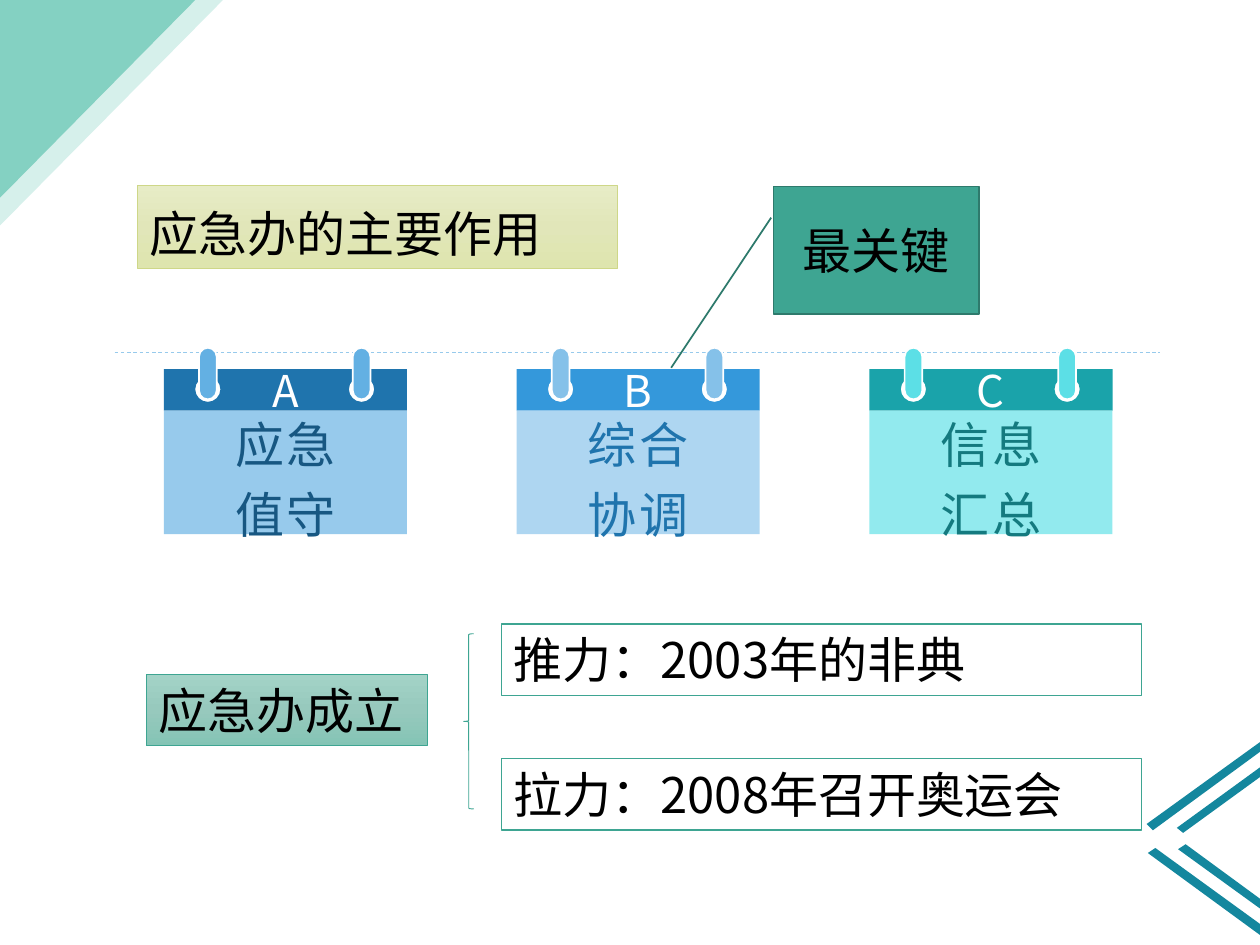
from lxml import etree
from pptx import Presentation
from pptx.dml.color import RGBColor
from pptx.enum.dml import MSO_LINE
from pptx.enum.shapes import MSO_CONNECTOR, MSO_SHAPE
from pptx.enum.text import MSO_ANCHOR, MSO_AUTO_SIZE, PP_ALIGN
from pptx.oxml.ns import qn
from pptx.util import Inches, Pt

RECTANGLE = MSO_SHAPE.RECTANGLE
TOP, MIDDLE = MSO_ANCHOR.TOP, MSO_ANCHOR.MIDDLE
LEFT, CENTER = PP_ALIGN.LEFT, PP_ALIGN.CENTER
GROW, FIXED = MSO_AUTO_SIZE.SHAPE_TO_FIT_TEXT, MSO_AUTO_SIZE.NONE
FONT = "Noto Sans CJK SC"

COLORS = {
    "white": "FFFFFF", "black": "000000",
    "corner_pale": "D6F0EB", "corner": "84D1C2", "stripe": "14879E",
    "rail": "97CAEC", "green": "3EA592", "green_dark": "2E7A6C",
    "title_line": "CED788",
}
TITLE_GRADIENT = ("E7ECC6", "E1E6B9", "DEE5AE")
CAUSE_GRADIENT = ("A3D3C7", "97C9BD", "84C4B5")
CARDS = [
    ("A", "应急\n值守", {"header": "1F74AD", "body": "97CAEC", "text": "175782", "ring": "63B0E3"}),
    ("B", "综合\n协调", {"header": "3498DB", "body": "AED6F1", "text": "1F74AD", "ring": "85C1E9"}),
    ("C", "信息\n汇总", {"header": "1AA3AA", "body": "92EAEE", "text": "147A7F", "ring": "5CDFE6"}),
]
REASONS = ["推力：2003年的非典", "拉力：2008年召开奥运会"]
STRIPES = [
    [(9.1, 6.54), (9.15, 6.59), (10.01, 5.96), (10, 5.89)],
    [(9.11, 6.77), (10, 7.42), (10.01, 7.34), (9.17, 6.73)],
    [(10, 6.09), (9.34, 6.57), (9.39, 6.61), (10.01, 6.16)],
    [(9.41, 6.7), (9.35, 6.74), (10, 7.21), (10.01, 7.14)],
]


def paint(shape, fill=None, line=None, width=0.5):
    """Set a shape's solid fill and outline and drop its shadow."""
    shape.shadow.inherit = False
    if fill:
        shape.fill.solid()
        shape.fill.fore_color.rgb = RGBColor.from_string(fill)
    else:
        shape.fill.background()
    if line:
        shape.line.color.rgb = RGBColor.from_string(line)
        shape.line.width = Pt(width)
    else:
        shape.line.fill.background()


def paint_gradient(shape, colors):
    """Fill a shape from top to bottom with evenly spaced colours."""
    shape.fill.gradient()
    shape.fill.gradient_angle = 270
    stops = shape._element.spPr.find(".//" + qn("a:gsLst"))
    for stop in list(stops):
        stops.remove(stop)
    for index, color in enumerate(colors):
        position = index * 100000 // (len(colors) - 1)
        stop = etree.SubElement(stops, qn("a:gs"), pos=str(position))
        etree.SubElement(stop, qn("a:srgbClr"), val=color)


def add_box(slide, kind, box, fill=None, line=None, width=0.5):
    """Add a painted preset shape at a box given in inches."""
    shape = slide.shapes.add_shape(kind, *map(Inches, box))
    paint(shape, fill, line, width)
    return shape


def add_outline(slide, points, fill):
    """Add a filled freeform with corners given in inches."""
    corners = [(Inches(x), Inches(y)) for x, y in points]
    builder = slide.shapes.build_freeform(*corners[0], scale=1.0)
    builder.add_line_segments(corners[1:], close=True)
    shape = builder.convert_to_shape()
    paint(shape, fill)
    return shape


def punch_hole(shape, center_x, center_y, radius):
    """Cut a round hole, placed relative to the shape, out of a freeform."""
    outline = shape._element.spPr.find(".//" + qn("a:path"))
    handle = 0.55
    curves = [
        ("moveTo", [(0, -1)]),
        ("cubicBezTo", [(-handle, -1), (-1, -handle), (-1, 0)]),
        ("cubicBezTo", [(-1, handle), (-handle, 1), (0, 1)]),
        ("cubicBezTo", [(handle, 1), (1, handle), (1, 0)]),
        ("cubicBezTo", [(1, -handle), (handle, -1), (0, -1)]),
        ("close", []),
    ]
    for command, points in curves:
        segment = etree.SubElement(outline, qn(f"a:{command}"))
        for x, y in points:
            etree.SubElement(segment, qn("a:pt"), x=str(Inches(center_x + radius * x)),
                             y=str(Inches(center_y + radius * y)))


def write(shape, text, color=COLORS["black"], size=28, align=LEFT, anchor=TOP,
          line_spacing=1.0, tracking=0, auto_size=FIXED):
    """Write formatted text into a shape."""
    frame = shape.text_frame
    frame.text = text
    frame.word_wrap = True
    frame.auto_size = auto_size
    frame.vertical_anchor = anchor
    for paragraph in frame.paragraphs:
        paragraph.alignment = align
        paragraph.line_spacing = line_spacing
        for run in paragraph.runs:
            run.font.name = FONT
            run.font.size = Pt(size)
            run.font.color.rgb = RGBColor.from_string(color)
            properties = run.font._element
            etree.SubElement(properties, qn("a:ea"), typeface=FONT)
            if tracking:
                properties.set("spc", str(int(tracking * 100)))


def add_decoration(slide):
    """Draw the corner triangles and the stripes at the right edge."""
    for width, height, color in ((1.77, 1.79, "corner_pale"), (1.55, 1.57, "corner")):
        triangle = add_box(slide, MSO_SHAPE.RIGHT_TRIANGLE, (0, 0, width, height), COLORS[color])
        triangle._element.spPr.find(qn("a:xfrm")).set("flipV", "1")
    for stripe in STRIPES:
        add_outline(slide, stripe, COLORS["stripe"])


def add_title(slide, box):
    """Place the title in its gradient box."""
    title = slide.shapes.title
    title.left, title.top, title.width, title.height = map(Inches, box)
    paint(title, line=COLORS["title_line"])
    paint_gradient(title, TITLE_GRADIENT)
    write(title, "应急办的主要作用", line_spacing=1.2)


def add_rail(slide, left, right, top):
    """Draw the dashed line that the cards hang from."""
    rail = slide.shapes.add_connector(
        MSO_CONNECTOR.STRAIGHT, Inches(left), Inches(top), Inches(right), Inches(top))
    rail.line.color.rgb = RGBColor.from_string(COLORS["rail"])
    rail.line.width = Pt(0.5)
    rail.line.dash_style = MSO_LINE.DASH
    etree.SubElement(rail._element.spPr, qn("a:effectLst"))


def add_card(slide, box, letter, label, colors):
    """Draw a calendar card with a punched header, a body and two rings."""
    left, top, width, height = box
    header_height = 0.33
    right, middle = left + width, top + header_height
    ring_offsets = (0.35, 1.57)
    corners = [(left, top), (right, top), (right, middle), (left, middle)]
    header = add_outline(slide, corners, colors["header"])
    for offset in ring_offsets:
        punch_hole(header, offset, 0.16, 0.1)
    write(header, letter, COLORS["white"], 25, CENTER, MIDDLE)
    body = add_box(slide, RECTANGLE, (left, middle, width, height - header_height), colors["body"])
    body.text_frame.margin_bottom = Inches(0.04)
    write(body, label, colors["text"], align=CENTER, anchor=MIDDLE, line_spacing=1.2, tracking=1.5)
    for offset in ring_offsets:
        ring = add_box(slide, MSO_SHAPE.ROUNDED_RECTANGLE,
                       (left + offset - 0.07, top - 0.17, 0.14, 0.41),
                       colors["ring"], COLORS["white"], 1)
        ring.adjustments[0] = 0.5


def add_causes(slide, box):
    """Draw the founding label, its brace and the stacked reasons."""
    left, top, width, height = box
    row_height = 0.57
    label = add_box(slide, RECTANGLE, (left, top + 0.4, 2.23, row_height), line=COLORS["green"])
    paint_gradient(label, CAUSE_GRADIENT)
    write(label, "应急办成立", auto_size=GROW)
    add_box(slide, MSO_SHAPE.LEFT_BRACE, (left + 2.52, top + 0.08, 0.08, 1.39), line=COLORS["green"])
    reason_left = left + 2.82
    pitch = (height - row_height) / (len(REASONS) - 1)
    for index, reason in enumerate(REASONS):
        row = (reason_left, top + index * pitch, left + width - reason_left, row_height)
        shape = add_box(slide, RECTANGLE, row, COLORS["white"], COLORS["green"], 1)
        write(shape, reason, auto_size=GROW)


def add_callout(slide, box):
    """Draw the callout that points at the middle card."""
    callout = add_box(slide, MSO_SHAPE.LINE_CALLOUT_1, box, COLORS["green"], COLORS["green_dark"], 1)
    for index, value in enumerate((0.245, -0.012, 1.425, -0.499)):
        callout.adjustments[index] = value
    write(callout, "最关键", align=CENTER, anchor=MIDDLE)


def main():
    """Build and save the slide."""
    presentation = Presentation()
    presentation.slide_width, presentation.slide_height = Inches(10), Inches(7.5)
    slide = presentation.slides.add_slide(presentation.slide_layouts[5])
    add_decoration(slide)
    add_title(slide, (1.09, 1.47, 3.81, 0.66))
    add_rail(slide, 0.91, 9.21, 2.8)
    for index, card in enumerate(CARDS):
        add_card(slide, (1.3 + index * 2.8, 2.93, 1.93, 1.31), *card)
    add_causes(slide, (1.16, 4.95, 7.9, 1.64))
    add_callout(slide, (6.14, 1.48, 1.63, 1.01))
    presentation.save("out.pptx")


if __name__ == "__main__":
    main()
